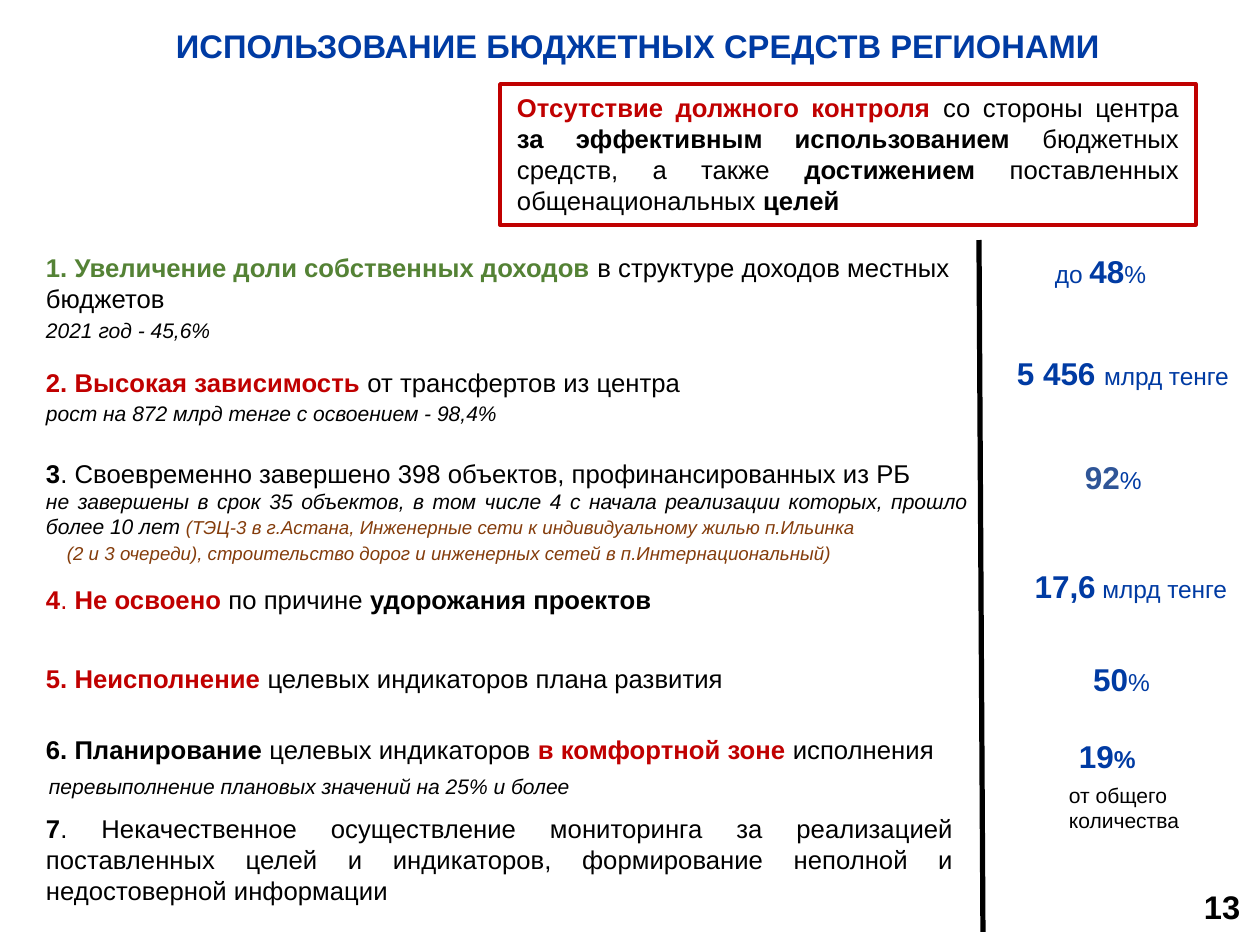
from dataclasses import dataclass

from lxml.etree import SubElement
from pptx import Presentation
from pptx.dml.color import RGBColor as Color
from pptx.enum.shapes import MSO_CONNECTOR as Connector, MSO_SHAPE as Shape
from pptx.enum.text import MSO_ANCHOR as Anchor, PP_ALIGN as Align
from pptx.oxml.ns import qn
from pptx.util import Emu, Pt

EMU_PER_PX = 914400 // 168


@dataclass(frozen=True)
class Theme:
    """Colours and type sizes of the slide."""
    font: str = "Arial"
    blue: str = "003BA3"
    slate: str = "2F5597"
    red: str = "C00000"
    green: str = "548235"
    brown: str = "843C0B"
    black: str = "000000"
    title: float = 14
    figure: float = 13.5
    unit: float = 10.5
    point: float = 11
    note: float = 9
    remark: float = 8


THEME = Theme()
STYLES = {
    "title": (THEME.title, THEME.blue, "b"),
    "number": (THEME.title, THEME.black, "b"),
    "figure": (THEME.figure, THEME.blue, "b"),
    "slate": (THEME.figure, THEME.slate, "b"),
    "unit": (THEME.unit, THEME.blue, ""),
    "unit bold": (THEME.unit, THEME.blue, "b"),
    "plain": (THEME.point, THEME.black, ""),
    "bold": (THEME.point, THEME.black, "b"),
    "red": (THEME.point, THEME.red, "b"),
    "red plain": (THEME.point, THEME.red, ""),
    "green": (THEME.point, THEME.green, "b"),
    "label": (THEME.note, THEME.black, ""),
    "note": (THEME.note, THEME.black, "i"),
    "remark": (THEME.remark, THEME.brown, "i"),
}
POINT_PITCH, NOTE_PITCH = 31, 25

WARNING = [
    ("Отсутствие должного контроля ", "red"), ("со стороны центра ", "plain"),
    ("за эффективным использованием ", "bold"), ("бюджетных средств, а также ", "plain"),
    ("достижением", "bold"), (" поставленных общенациональных ", "plain"), ("целей", "bold"),
]

# Each entry: gap above, left indent, right indent, alignment, spans
FINDINGS = [
    (0, 0, 0, Align.LEFT, [("1. Увеличение доли собственных доходов ", "green"),
                           ("в структуре доходов местных бюджетов", "plain")]),
    (4, 0, 0, Align.LEFT, [("2021 год - 45,6%", "note")]),
    (24, 0, 0, Align.LEFT, [("2. Высокая зависимость ", "red"),
                            ("от трансфертов из центра", "plain")]),
    (3, 0, 0, Align.LEFT, [("рост на 872 млрд тенге с освоением - 98,4%", "note")]),
    (32, 0, 0, Align.LEFT, [
        ("3", "bold"),
        (". Своевременно завершено 398 объектов, профинансированных из РБ", "plain")]),
    (0, 0, 0, Align.JUSTIFY, [
        ("не завершены в срок 35 объектов, в том числе 4 с начала реализации которых, "
         "прошло более 10 лет ", "note"),
        ("(ТЭЦ-3 в г.Астана, Инженерные сети к индивидуальному жилью п.Ильинка", "remark")]),
    (0, 21, 0, Align.LEFT, [
        ("(2 и 3 очереди), строительство дорог и инженерных сетей в п.Интернациональный)",
         "remark")]),
    (20, 0, 0, Align.LEFT, [("4", "red"), (". ", "red plain"), ("Не освоено ", "red"),
                            ("по причине ", "plain"), ("удорожания проектов", "bold")]),
    (48, 0, 0, Align.LEFT, [("5. Неисполнение ", "red"),
                            ("целевых индикаторов плана развития", "plain")]),
    (40, 0, 0, Align.LEFT, [("6. Планирование ", "bold"), ("целевых индикаторов ", "plain"),
                            ("в комфортной зоне ", "red"), ("исполнения", "plain")]),
    (9, 3, 0, Align.LEFT, [("перевыполнение плановых значений на 25% и более", "note")]),
    (14, 0, 13, Align.JUSTIFY, [
        ("7", "bold"),
        (". Некачественное осуществление мониторинга за реализацией поставленных целей "
         "и индикаторов, формирование неполной и недостоверной информации", "plain")]),
]

FIGURES = [
    ((1038, 244, 163, 57), Align.LEFT, [("до ", "unit"), ("48", "figure"), ("%", "unit")]),
    ((1000, 346, 260, 55), Align.LEFT, [("5 456 ", "figure"), ("млрд тенге", "unit")]),
    ((1068, 450, 106, 57), Align.LEFT, [("92", "slate"), ("%", "unit")]),
    ((1002, 559, 258, 55), Align.CENTER, [("17,6", "figure"), (" млрд тенге", "unit")]),
    ((1057, 652, 129, 55), Align.CENTER, [("50", "figure"), ("%", "unit")]),
    ((1062, 729, 118, 55), Align.LEFT, [("19", "figure"), ("%", "unit bold")]),
    ((1052, 774, 158, 67), Align.LEFT, [("от общего количества", "label")]),
    ((1187, 879, 73, 57), Align.LEFT, [("13", "number")]),
]


def px(length):
    """Turn whole pixels into EMU."""
    return Emu(length * EMU_PER_PX)


def place(shape, box):
    """Move and size a shape to a pixel box."""
    shape.left, shape.top, shape.width, shape.height = map(px, box)


def frame_of(shape, margins=(17, 8)):
    """Prepare a wrapping, top-anchored text frame."""
    frame = shape.text_frame
    frame.word_wrap = True
    frame.vertical_anchor = Anchor.TOP
    frame.margin_left = frame.margin_right = px(margins[0])
    frame.margin_top = frame.margin_bottom = px(margins[1])
    return frame


def write(para, spans, align=Align.LEFT):
    """Fill a paragraph with styled spans."""
    para.alignment = align
    for text, style in spans:
        size, color, marks = STYLES[style]
        span = para.add_run()
        span.text = text
        span.font.name = THEME.font
        span.font.size = Pt(size)
        span.font.bold = "b" in marks
        span.font.italic = "i" in marks
        span.font.color.rgb = Color.from_string(color)


def add_title(page):
    """Fill the title placeholder."""
    place(page.shapes.title, (164, 14, 1033, 64))
    frame = frame_of(page.shapes.title, (12, 12))
    write(frame.paragraphs[0], [("ИСПОЛЬЗОВАНИЕ БЮДЖЕТНЫХ СРЕДСТВ РЕГИОНАМИ", "title")])


def add_findings(page):
    """Fill the body placeholder with the numbered findings."""
    body = page.placeholders[1]
    place(body, (29, 244, 955, 680))
    frame = frame_of(body)
    for index, (gap, left, right, align, spans) in enumerate(FINDINGS):
        para = frame.add_paragraph() if index else frame.paragraphs[0]
        write(para, spans, align)
        is_note = spans[0][1] in ("note", "remark")
        para.line_spacing = px(NOTE_PITCH if is_note else POINT_PITCH)
        para.space_before = px(gap)
        para.space_after = Pt(0)
        properties = para._p.get_or_add_pPr()
        for name, value in (("marL", left), ("marR", right), ("indent", 0)):
            properties.set(name, str(px(value)))
        SubElement(properties, qn("a:buNone"))


def add_warning(page):
    """Draw the red framed warning."""
    box = page.shapes.add_shape(Shape.RECTANGLE, *map(px, (500, 84, 696, 141)))
    box.shadow.inherit = False
    box.fill.background()
    box.line.color.rgb = Color.from_string(THEME.red)
    box.line.width = Pt(1.5)
    para = frame_of(box).paragraphs[0]
    write(para, WARNING, Align.JUSTIFY)
    para.line_spacing = px(POINT_PITCH)


def add_figure(page, box, align, spans):
    """Add a text box with a figure or a label."""
    write(frame_of(page.shapes.add_textbox(*map(px, box))).paragraphs[0], spans, align)


def add_divider(page):
    """Draw the line between findings and figures."""
    line = page.shapes.add_connector(Connector.STRAIGHT, *map(px, (979, 240, 983, 932)))
    line.line.color.rgb = Color.from_string(THEME.black)
    line.line.width = Pt(2.25)
    SubElement(line._element.spPr, qn("a:effectLst"))


def main():
    """Build and save the slide."""
    deck = Presentation()
    deck.slide_width, deck.slide_height = px(1260), px(945)
    page = deck.slides.add_slide(deck.slide_layouts[1])
    add_title(page)
    add_findings(page)
    add_divider(page)
    add_warning(page)
    for box, align, spans in FIGURES:
        add_figure(page, box, align, spans)
    deck.save("out.pptx")


if __name__ == "__main__":
    main()
